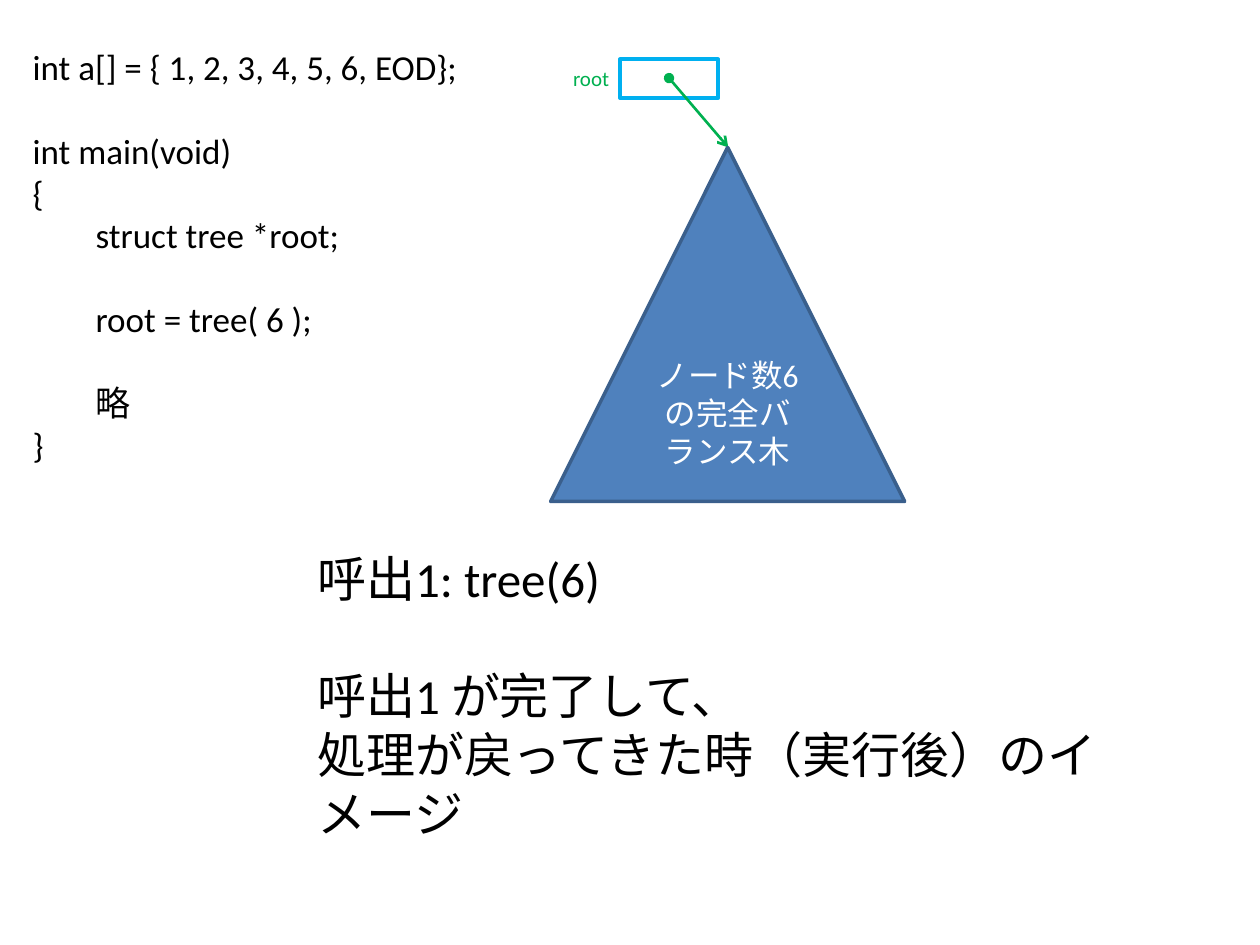
from lxml import etree
from pptx import Presentation
from pptx.dml.color import RGBColor
from pptx.enum import shapes, text
from pptx.oxml import ns
from pptx.util import Inches, Pt

FONT = "Calibri"
BLACK = RGBColor(0x00, 0x00, 0x00)
WHITE = RGBColor(0xFF, 0xFF, 0xFF)
GREEN = RGBColor(0x00, 0xB0, 0x50)
CYAN = RGBColor(0x00, 0xB0, 0xF0)
BLUE = RGBColor(0x4F, 0x81, 0xBD)
DARK_BLUE = RGBColor(0x3A, 0x5F, 0x8C)

# Blocks of lines, set apart by one line of space
CODE = [
    ["int a[] = { 1, 2, 3, 4, 5, 6, EOD};"],
    ["int main(void)", "{", "\tstruct tree *root;"],
    ["\troot = tree( 6 );"],
    ["\t略", "}"],
]
CALL = [
    ["呼出1: tree(6)"],
    ["呼出1 が完了して、", "処理が戻ってきた時（実行後）のイメージ"],
]


def style(paragraph, size, color):
    paragraph.font.name = FONT
    paragraph.font.size = Pt(size)
    paragraph.font.color.rgb = color


def add_text(slide, box, blocks, size, color, gap=0):
    frame = slide.shapes.add_textbox(*map(Inches, box)).text_frame
    frame.word_wrap = True
    frame.auto_size = text.MSO_AUTO_SIZE.SHAPE_TO_FIT_TEXT
    frame.text = "\n".join(line for block in blocks for line in block)
    for paragraph in frame.paragraphs:
        style(paragraph, size, color)
    start = 0
    for block in blocks[:-1]:
        start += len(block)
        frame.paragraphs[start].space_before = Pt(gap)


def add_outlined(slide, kind, box, line, fill=None):
    shape = slide.shapes.add_shape(kind, *map(Inches, box))
    shape.shadow.inherit = False
    if fill is None:
        shape.fill.background()
    else:
        shape.fill.solid()
        shape.fill.fore_color.rgb = fill
    shape.line.color.rgb = line
    shape.line.width = Pt(2)
    return shape


def add_pointer(slide, start, end, color):
    pointer = slide.shapes.add_connector(
        shapes.MSO_CONNECTOR.STRAIGHT, *map(Inches, start + end))
    pointer.line.color.rgb = color
    pointer.line.width = Pt(1.5)
    line = pointer.line._get_or_add_ln()
    for tag, ending in (("a:headEnd", "oval"), ("a:tailEnd", "arrow")):
        etree.SubElement(line, ns.qn(tag), type=ending)
    etree.SubElement(pointer._element.spPr, ns.qn("a:effectLst"))


def main():
    prs = Presentation()
    prs.slide_width, prs.slide_height = Inches(10), Inches(7.5)
    slide = prs.slides.add_slide(prs.slide_layouts[6])

    # Explanation and program
    add_text(slide, (2.42, 4.3, 6.83, 1.99), CALL, 28, BLACK, gap=33.5)
    add_text(slide, (0.16, 0.31, 9.22, 3.47), CODE, 20, BLACK, gap=24)

    # Root variable pointing at the tree
    add_outlined(slide, shapes.MSO_SHAPE.RECTANGLE,
                 (4.92, 0.47, 0.78, 0.31), CYAN)
    add_text(slide, (4.45, 0.47, 0.63, 0.3), [["root"]], 12, GREEN)
    add_pointer(slide, (5.31, 0.62), (5.78, 1.17), GREEN)

    # Balanced tree
    tree = add_outlined(slide, shapes.MSO_SHAPE.ISOSCELES_TRIANGLE,
                        (4.37, 1.17, 2.81, 2.81), DARK_BLUE, BLUE)
    label = tree.text_frame
    label.text = "ノード数6の完全バランス木"
    label.word_wrap = True
    label.vertical_anchor = text.MSO_ANCHOR.MIDDLE
    label.paragraphs[0].alignment = text.PP_ALIGN.CENTER
    style(label.paragraphs[0], 18, WHITE)

    prs.save("out.pptx")


if __name__ == "__main__":
    main()
